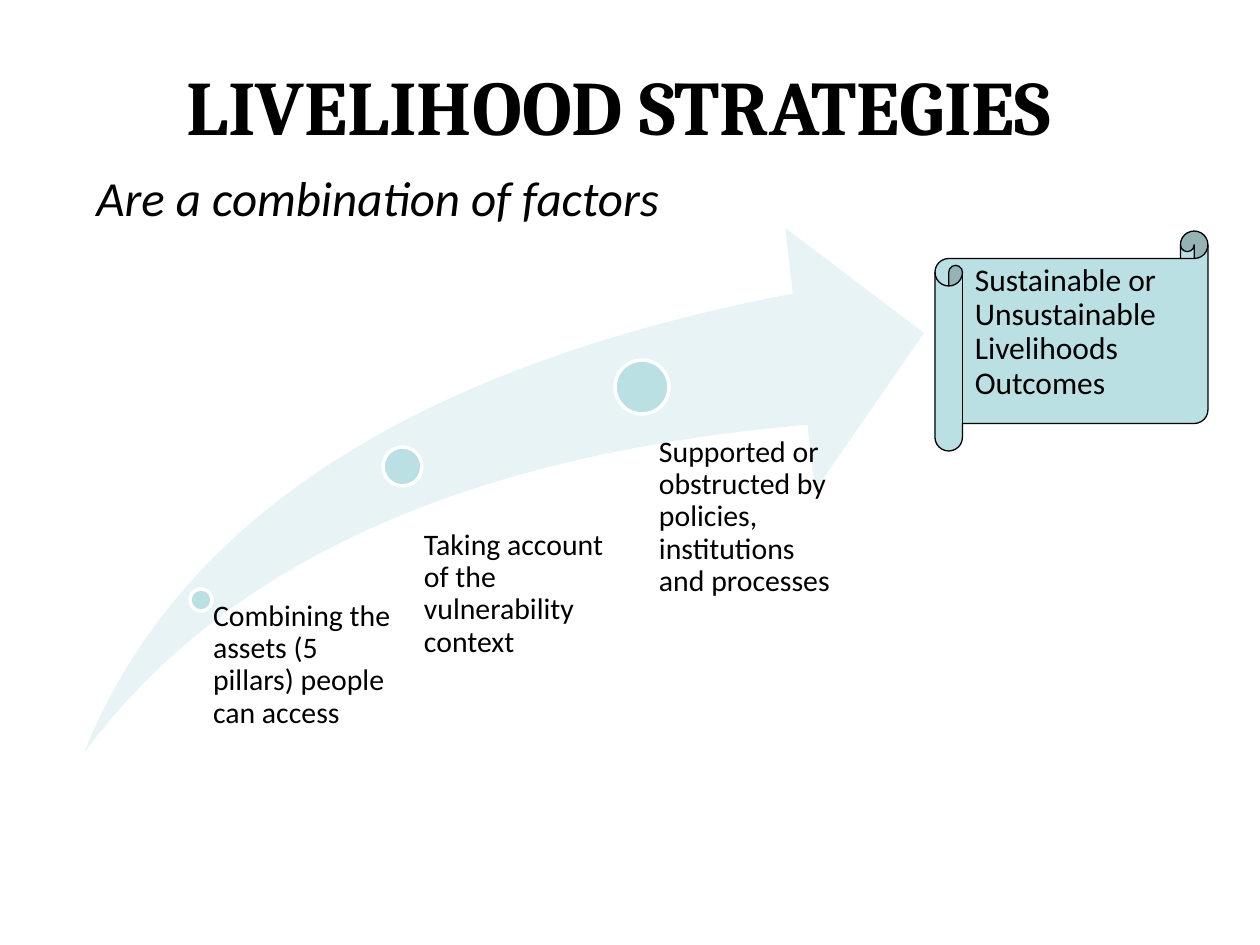
import pptx
import pptx.util
import pptx.dml.color
import pptx.enum.shapes
import pptx.enum.text

PX = 914400 / 126
SHAPE = pptx.enum.shapes.MSO_SHAPE
ALIGN = pptx.enum.text.PP_ALIGN
ANCHOR = pptx.enum.text.MSO_ANCHOR

deck = pptx.Presentation()
deck.slide_width = pptx.util.Inches(10)
deck.slide_height = pptx.util.Inches(7.5)
page = deck.slides.add_slide(deck.slide_layouts[6])


def paint(part, color):
    """Set a fill, line fill or font colour from a hex string."""
    if hasattr(part, "solid"):
        part.solid()
        part = part.fore_color
    else:
        part = part.color
    part.rgb = pptx.dml.color.RGBColor.from_string(color)


def write(shape, text, size, face="Calibri", space=0.9):
    """Put one top-left paragraph of black text in a shape."""
    frame = shape.text_frame
    frame.word_wrap = True
    frame.vertical_anchor = ANCHOR.TOP
    frame.text = text
    para = frame.paragraphs[0]
    para.alignment = ALIGN.LEFT
    para.line_spacing = space
    font = para.runs[0].font
    font.name = face
    font.size = pptx.util.Pt(size)
    paint(font, "000000")
    return para


# Title
box = page.shapes.add_textbox(*[int(n * PX) for n in (84, 42, 1071, 126)])
para = write(box, "LIVELIHOOD STRATEGIES", 44, "Cambria", 1.0)
para.alignment = ALIGN.CENTER
para.runs[0].font.bold = True
box.text_frame.vertical_anchor = ANCHOR.MIDDLE

# Lead line
box = page.shapes.add_textbox(*[int(n * PX) for n in (84, 168, 1124, 651)])
para = write(box, "Are a combination of factors", 28)
para.space_before = pptx.util.Pt(5.6)
para.runs[0].font.italic = True

# Arrow, dots and scroll: kind, place, fill, line colour, line width
shapes = [
    (SHAPE.SWOOSH_ARROW, (84, 228, 840, 525), "E7F3F4", None, 0),
    (SHAPE.OVAL, (190, 589, 22, 22), "BBE0E3", "FFFFFF", 2),
    (SHAPE.OVAL, (383, 447, 39, 39), "BBE0E3", "FFFFFF", 2),
    (SHAPE.OVAL, (615, 360, 54, 54), "BBE0E3", "FFFFFF", 2),
    (SHAPE.HORIZONTAL_SCROLL, (935, 231, 273, 220), "BBE0E3", "000000", 0.75),
]
for kind, place, fill, edge, width in shapes:
    shape = page.shapes.add_shape(kind, *[int(n * PX) for n in place])
    shape.shadow.inherit = False
    paint(shape.fill, fill)
    if edge:
        paint(shape.line.fill, edge)
        shape.line.width = pptx.util.Pt(width)
    else:
        shape.line.fill.background()
    if kind == SHAPE.SWOOSH_ARROW:
        shape.adjustments[0] = 0.25
        shape.adjustments[1] = 0.25
    if kind == SHAPE.HORIZONTAL_SCROLL:
        write(shape, "Sustainable or Unsustainable Livelihoods Outcomes", 18)

# Labels under the dots: place, left inset, text
labels = [
    ((202, 601, 195, 151), 11,
     "Combining the assets (5 pillars) people can access"),
    ((403, 530, 202, 160), 21,
     "Taking account of the vulnerability context"),
    ((630, 437, 202, 197), 29,
     "Supported or obstructed by policies, institutions and processes"),
]
for place, inset, text in labels:
    box = page.shapes.add_textbox(*[int(n * PX) for n in place])
    frame = box.text_frame
    frame.margin_left = int(inset * PX)
    frame.margin_top = frame.margin_right = frame.margin_bottom = 0
    write(box, text, 17)

deck.save("out.pptx")
